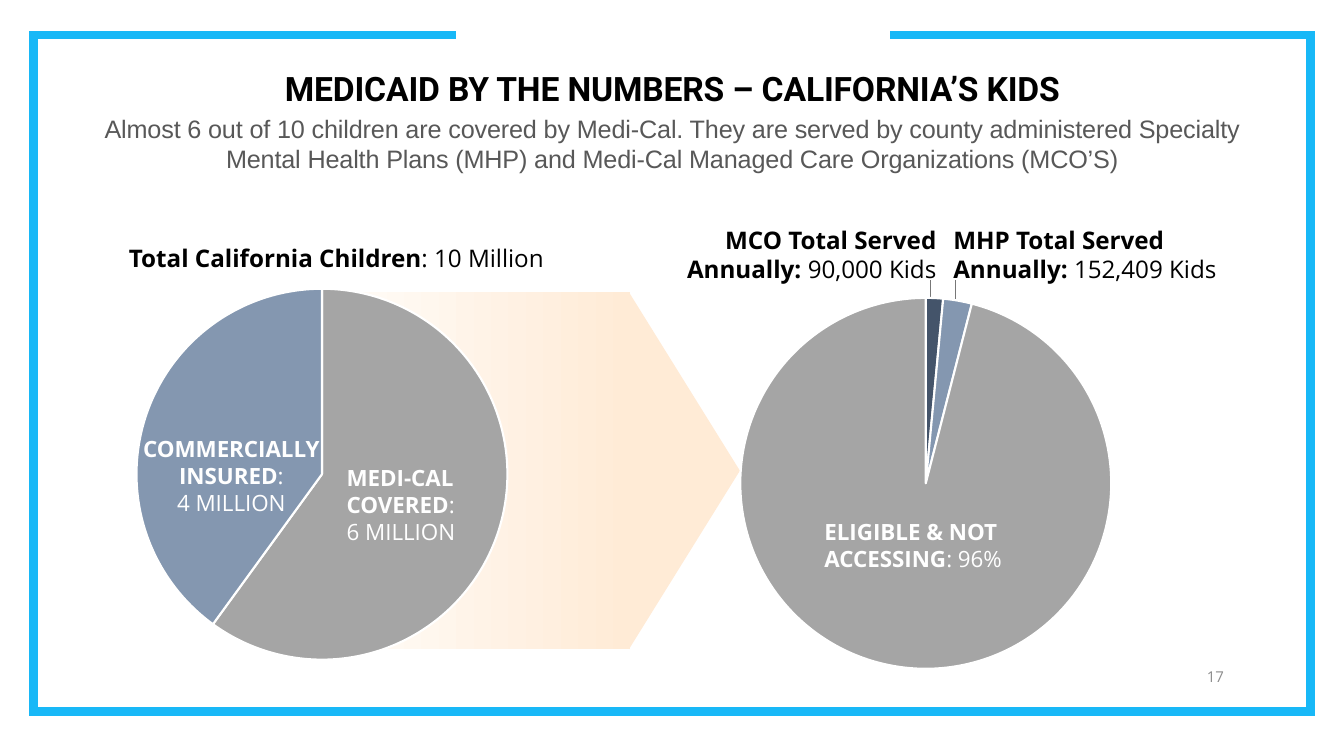
"""Build the slide on Medi-Cal coverage of California's children."""
from lxml.etree import SubElement, fromstring
from pptx import Presentation
from pptx.chart.data import CategoryChartData
from pptx.dml.color import RGBColor
from pptx.enum.chart import XL_CHART_TYPE
from pptx.enum.shapes import MSO_CONNECTOR, MSO_SHAPE
from pptx.enum.text import MSO_ANCHOR, MSO_AUTO_SIZE, PP_ALIGN
from pptx.oxml import parse_xml
from pptx.oxml.ns import nsdecls, qn
from pptx.util import Pt

SKY = RGBColor(0x18, 0xB8, 0xF7)
PEACH = RGBColor(0xFF, 0xEB, 0xD6)
WHITE = RGBColor(0xFF, 0xFF, 0xFF)
BLACK = RGBColor(0, 0, 0)
DARK_GRAY = RGBColor(0x58, 0x58, 0x58)
LEADER_GRAY = RGBColor(0x77, 0x77, 0x77)
NUMBER_GRAY = RGBColor(0x8C, 0x8C, 0x8C)
SLICE_GRAY = RGBColor(0xA5, 0xA5, 0xA5)
SLICE_BLUE = RGBColor(0x84, 0x97, 0xB0)
SLICE_NAVY = RGBColor(0x44, 0x54, 0x6A)

LEFT, CENTER, RIGHT = PP_ALIGN.LEFT, PP_ALIGN.CENTER, PP_ALIGN.RIGHT
BREAK = "\n"

TITLE = "MEDICAID BY THE NUMBERS – CALIFORNIA’S KIDS"
SUMMARY = ("Almost 6 out of 10 children are covered by Medi-Cal. They are served by county "
           "administered Specialty Mental Health Plans (MHP) and Medi-Cal Managed Care "
           "Organizations (MCO’S)")

PIES = [
    ((47.5, 195.8), [60, 40, None], [SLICE_GRAY, SLICE_BLUE, SLICE_GRAY]),
    ((478.8, 202.3), [1.5, 2.5, 96, None], [SLICE_NAVY, SLICE_BLUE, SLICE_GRAY, SLICE_NAVY]),
]
PIE_FRAME = (365, 286)
PIE_DIAMETER = 265

HEADINGS = [
    ((85, 170.6, 363.6, 28), LEFT, [[("Total California Children", True), (": 10 Million", False)]]),
    ((458.6, 157.7, 217.4, 49), RIGHT,
     [[("MCO Total Served Annually: ", True), ("90,000 Kids", False)]]),
    ((673.9, 157.7, 218.9, 49), LEFT,
     [[("MHP Total Served Annually: ", True), ("152,409 Kids", False)]]),
]
SLICE_LABELS = [
    ((581.8, 366.5, 146.2, 42.5), LEFT, [[("ELIGIBLE & NOT ACCESSING", True), (": 96%", False)]]),
    ((90, 307.4, 150.5, 65.5), CENTER,
     [[("COMMERCIALLY INSURED", True), (":", False)], [("4 MILLION", False)]]),
    ((240.5, 328.3, 106.6, 60.5), LEFT,
     [[("MEDI-CAL COVERED", True), (":", False), (BREAK, False), ("6 MILLION", False)]]),
]
PAGE_NUMBER = ((673.9, 470.2, 207.4, 26.6), RIGHT, [[("17", False)]])

FRAME = [(325.4, 25), (24, 25), (24, 508.3), (936, 508.3), (936, 25), (635.8, 25)]
ARROW_TOP, ARROW_HEIGHT = 208.8, 254.9
ARROW_LEFT, ARROW_NECK, ARROW_HEAD = 201.6, 449.3, 79.2
LEADERS = [664.6, 682.6]
LEADER_TOP, LEADER_BOTTOM = 200.2, 230.4


def points(*lengths):
    return [Pt(length) for length in lengths]


def format_paragraph(paragraph, size, face, color, align):
    paragraph.alignment = align
    paragraph.font.size = Pt(size)
    paragraph.font.name = face
    paragraph.font.color.rgb = color


def fill_placeholder(holder, box, text, size, face, color, bold, anchor):
    holder.left, holder.top, holder.width, holder.height = points(*box)
    frame = holder.text_frame
    frame.text = text
    frame.word_wrap = True
    frame.auto_size = MSO_AUTO_SIZE.NONE
    frame.vertical_anchor = anchor
    paragraph = frame.paragraphs[0]
    properties = paragraph._p.get_or_add_pPr()
    properties.set("marL", "0")
    properties.set("indent", "0")
    SubElement(properties, qn("a:buNone"))
    paragraph.space_before = Pt(0)
    format_paragraph(paragraph, size, face, color, CENTER)
    paragraph.font.bold = bold
    paragraph.runs[0]._r.get_or_add_rPr().set("spc", "-10")


def add_label(slide, label, size, color, anchor=MSO_ANCHOR.TOP):
    box, align, lines = label
    frame = slide.shapes.add_textbox(*points(*box)).text_frame
    frame.word_wrap = True
    frame.vertical_anchor = anchor
    for index, line in enumerate(lines):
        paragraph = frame.add_paragraph() if index else frame.paragraphs[0]
        format_paragraph(paragraph, size, "Open Sans", color, align)
        for text, bold in line:
            if text == BREAK:
                paragraph.add_line_break()
                continue
            run = paragraph.add_run()
            run.text = text
            run.font.bold = bold


def add_frame(slide):
    builder = slide.shapes.build_freeform(*points(*FRAME[0]))
    builder.add_line_segments([points(*corner) for corner in FRAME[1:]], close=False)
    border = builder.convert_to_shape()
    border.shadow.inherit = False
    border.fill.background()
    border.line.color.rgb = SKY
    border.line.width = Pt(6)
    SubElement(border.line._get_or_add_ln(), qn("a:miter"), lim="800000")


def add_arrow(slide):
    head = slide.shapes.add_shape(MSO_SHAPE.ISOSCELES_TRIANGLE, *points(
        ARROW_NECK + (ARROW_HEAD - ARROW_HEIGHT) / 2,
        ARROW_TOP + (ARROW_HEIGHT - ARROW_HEAD) / 2, ARROW_HEIGHT, ARROW_HEAD))
    head.rotation = 90
    head.fill.solid()
    head.fill.fore_color.rgb = PEACH
    shaft = slide.shapes.add_shape(MSO_SHAPE.RECTANGLE, *points(
        ARROW_LEFT, ARROW_TOP, ARROW_NECK + 1 - ARROW_LEFT, ARROW_HEIGHT))
    shaft.fill.gradient()
    shaft.fill.gradient_angle = 0
    for stop, color, position in zip(shaft.fill.gradient_stops, (WHITE, PEACH), (0, 1)):
        stop.color.rgb = color
        stop.position = position
    for part in (head, shaft):
        part.shadow.inherit = False
        part.line.fill.background()


def add_leader(slide, x):
    leader = slide.shapes.add_connector(
        MSO_CONNECTOR.STRAIGHT, *points(x, LEADER_BOTTOM, x, LEADER_TOP))
    leader.line.color.rgb = LEADER_GRAY
    leader.line.width = Pt(0.75)
    SubElement(leader._element.spPr, qn("a:effectLst"))


def add_pie(slide, corner, shares, colors):
    data = CategoryChartData()
    data.categories = [str(number + 1) for number in range(len(shares))]
    data.add_series("Series 1", shares)
    chart = slide.shapes.add_chart(
        XL_CHART_TYPE.PIE, *points(*corner, *PIE_FRAME), data).chart
    chart.has_legend = False
    chart.has_title = False
    chart.font.name = "Calibri"
    chart.font.size = Pt(10)
    chart.font.color.rgb = BLACK
    chart.plots[0].vary_by_categories = True
    for index, color in enumerate(colors):
        slice_format = chart.plots[0].series[0].points[index].format
        slice_format.fill.solid()
        slice_format.fill.fore_color.rgb = color
        slice_format.line.color.rgb = WHITE
        slice_format.line.width = Pt(1.5)
    width, height = (PIE_DIAMETER / side for side in PIE_FRAME)
    sizes = {"x": (1 - width) / 2, "y": (1 - height) / 2, "w": width, "h": height}
    area = chart.element.find(".//" + qn("c:plotArea"))
    for layout in area.findall(qn("c:layout")):
        area.remove(layout)
    values = "".join(f'<c:{key} val="{size:.4f}"/>' for key, size in sizes.items())
    area.insert(0, parse_xml(
        f'<c:layout {nsdecls("c")}><c:manualLayout><c:layoutTarget val="inner"/>'
        f'<c:xMode val="edge"/><c:yMode val="edge"/>{values}</c:manualLayout></c:layout>'))
    chart.element.find(qn("c:chart")).addnext(fromstring(
        f'<c:spPr {nsdecls("c", "a")}><a:noFill/><a:ln><a:noFill/></a:ln></c:spPr>'))


def main():
    deck = Presentation()
    deck.slide_width, deck.slide_height = points(960, 540)
    slide = deck.slides.add_slide(deck.slide_layouts[1])
    title, summary = slide.placeholders
    fill_placeholder(title, (47.5, 43.2, 865.4, 39.6), TITLE, 24, "Roboto", BLACK, True,
                     MSO_ANCHOR.MIDDLE)
    fill_placeholder(summary, (48, 77.5, 864, 69), SUMMARY, 18, "Arial", DARK_GRAY, False,
                     MSO_ANCHOR.TOP)
    add_frame(slide)
    add_arrow(slide)
    for x in LEADERS:
        add_leader(slide, x)
    add_label(slide, PAGE_NUMBER, 10.7, NUMBER_GRAY, MSO_ANCHOR.MIDDLE)
    for heading in HEADINGS:
        add_label(slide, heading, 17.3, BLACK)
    for pie in PIES:
        add_pie(slide, *pie)
    for label in SLICE_LABELS:
        add_label(slide, label, 16, WHITE)
    deck.save("out.pptx")


if __name__ == "__main__":
    main()
